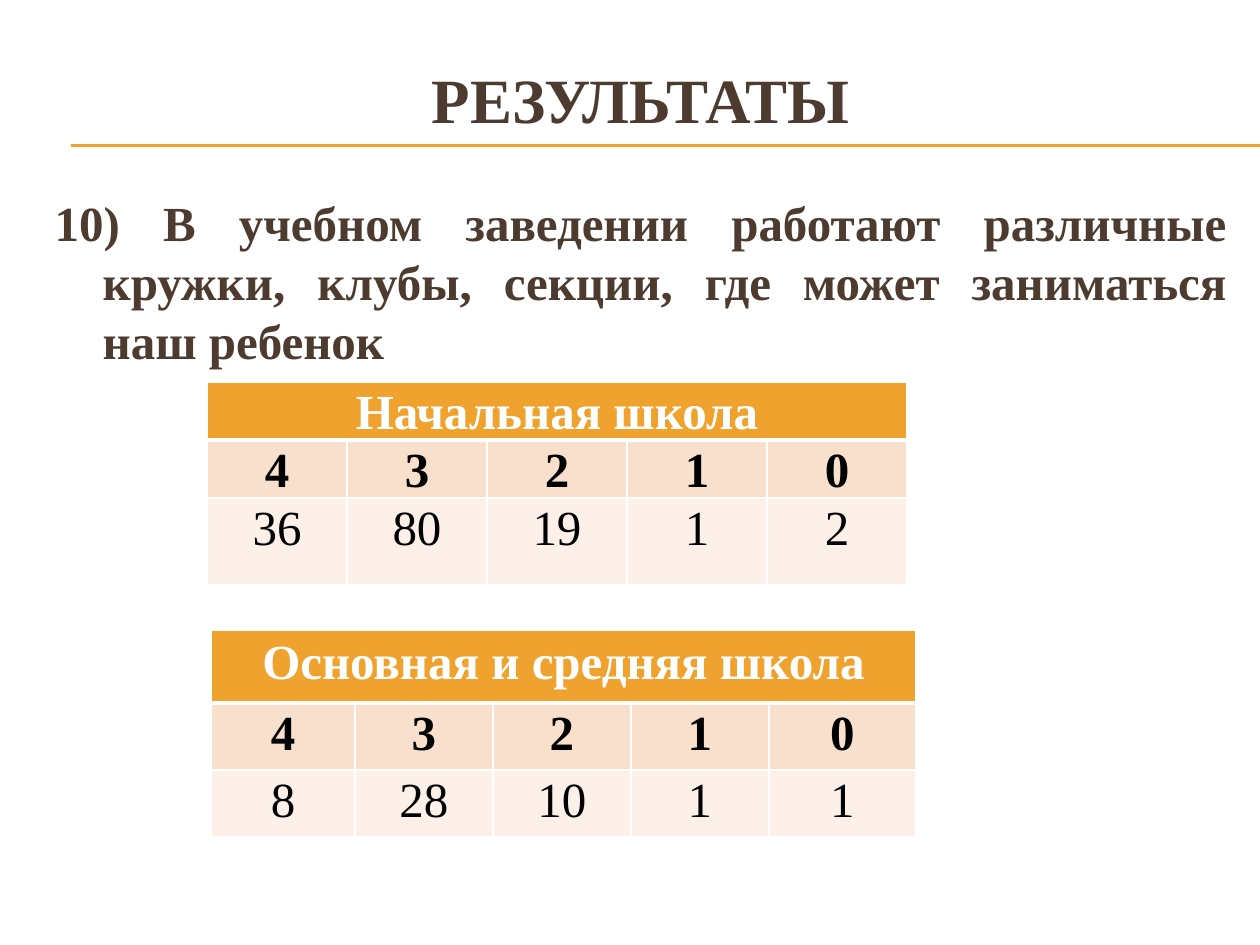
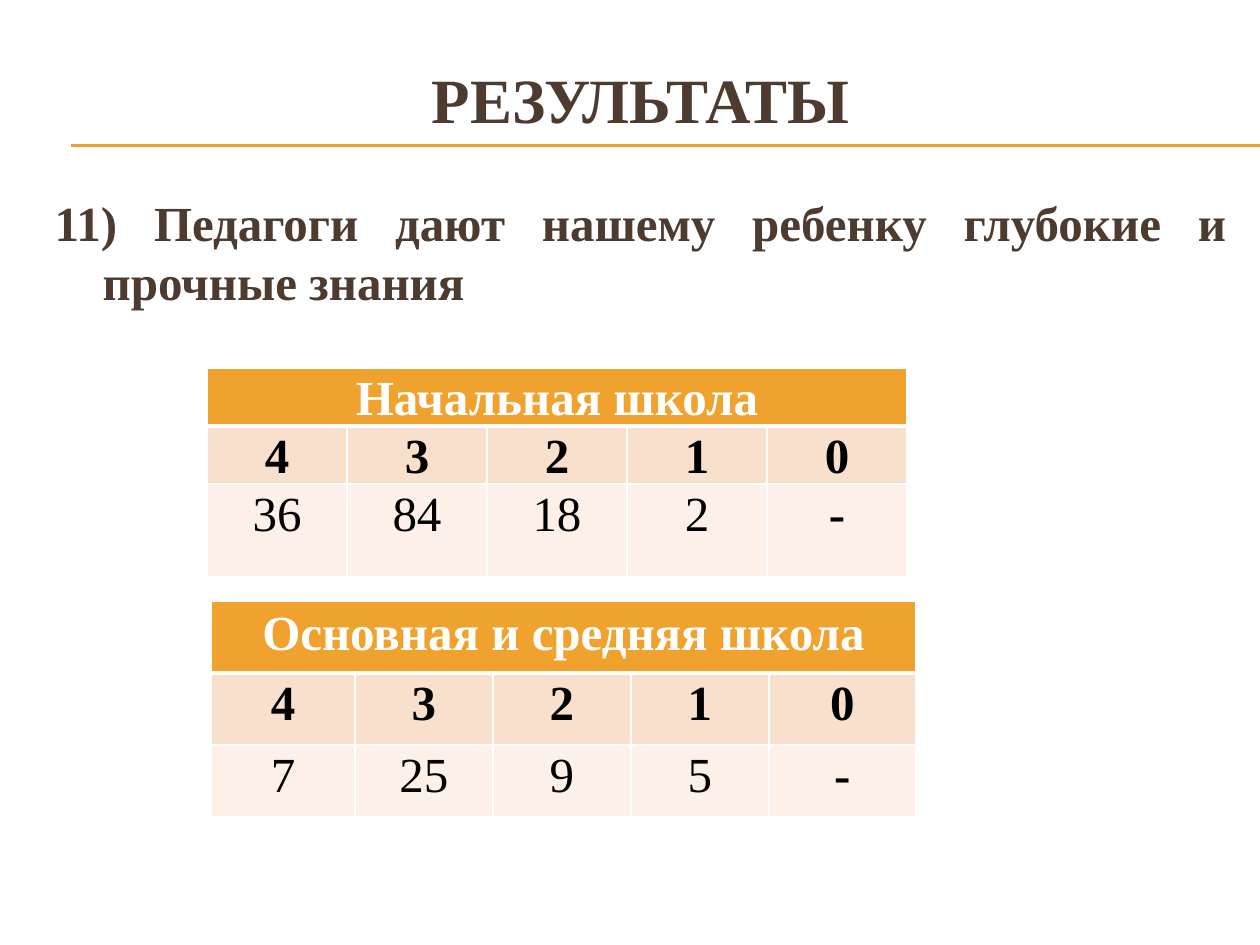
"""Build two survey result slides, each with a statement and two score tables."""

import dataclasses
import typing

import lxml.etree
import pptx
import pptx.dml.color
import pptx.enum.shapes
import pptx.enum.text
import pptx.oxml.ns
import pptx.util

EMU_PER_PX = 914400 / 126


@dataclasses.dataclass(frozen=True)
class Theme:
    font: str = "Times New Roman"
    brown: str = "4E3B30"
    orange: str = "F0A22E"
    peach: str = "F9E0CD"
    cream: str = "FCF0E8"
    white: str = "FFFFFF"
    black: str = "000000"
    title_size: int = 36
    text_size: int = 28
    rule_width: float = 0.75
    border_width: int = 1
    header_border_width: int = 3


class Box(typing.NamedTuple):
    left: int
    top: int
    width: int
    height: int


class TableStyle(typing.NamedTuple):
    heading: str
    left: int
    columns: tuple[int, ...]
    header_inset: int
    header_spacing: float


class ScoreTable(typing.NamedTuple):
    style: TableStyle
    top: int
    rows: tuple[int, ...]
    counts: tuple[str, ...]


class ResultSlide(typing.NamedTuple):
    statement: str
    tables: tuple[ScoreTable, ...]


THEME = Theme()
ALIGN = pptx.enum.text.PP_ALIGN
TITLE = "РЕЗУЛЬТАТЫ"
TITLE_BOX = Box(42, 39, 1197, 118)
BODY_BOX = Box(42, 186, 1197, 650)
HANGING_INDENT = 48
RULE_LEFT, RULE_RIGHT, RULE_TOPS = 71, 1260, (145, 146)
CELL_SIDE_INSET = 9
CELL_LINE_SPACING = 1.07
SCORES = ("4", "3", "2", "1", "0")

PRIMARY = TableStyle("Начальная школа", 207, (140,) * 5, 0, CELL_LINE_SPACING)
SECONDARY = TableStyle("Основная и средняя школа", 211, (144, 138, 138, 138, 147), 6, 1.0)

SLIDES = (
    ResultSlide(
        "10) В учебном заведении работают различные кружки, клубы, секции, "
        "где может заниматься наш ребенок",
        (
            ScoreTable(PRIMARY, 382, (58, 58, 87), ("36", "80", "19", "1", "2")),
            ScoreTable(SECONDARY, 630, (73, 67, 67), ("8", "28", "10", "1", "1")),
        ),
    ),
    ResultSlide(
        "11) Педагоги дают нашему ребенку глубокие и прочные знания",
        (
            ScoreTable(PRIMARY, 368, (58, 58, 93), ("36", "84", "18", "2", "-")),
            ScoreTable(SECONDARY, 601, (72, 72, 72), ("7", "25", "9", "5", "-")),
        ),
    ),
)


def px(length: int) -> pptx.util.Emu:
    return pptx.util.Emu(round(length * EMU_PER_PX))


def rgb(color: str) -> pptx.dml.color.RGBColor:
    return pptx.dml.color.RGBColor.from_string(color)


def apply_format(target: typing.Any, values: dict[str, typing.Any]) -> None:
    for name, value in values.items():
        setattr(target, name, value)


def add_element(parent: typing.Any, tag: str, **attributes: str) -> typing.Any:
    return lxml.etree.SubElement(parent, pptx.oxml.ns.qn(tag), attributes)


def write_text(frame: typing.Any, text: str, size: int, color: str, bold: bool,
               paragraph_format: dict[str, typing.Any]) -> typing.Any:
    paragraph = frame.paragraphs[0]
    apply_format(paragraph, paragraph_format)
    run = paragraph.add_run()
    run.text = text
    apply_format(run.font, {"name": THEME.font, "size": pptx.util.Pt(size), "bold": bold})
    run.font.color.rgb = rgb(color)
    return paragraph


def fill_placeholder(shape: typing.Any, box: Box, text: str, size: int, anchor: typing.Any,
                     paragraph_format: dict[str, typing.Any]) -> typing.Any:
    apply_format(shape, {name: px(value) for name, value in box._asdict().items()})
    apply_format(shape.text_frame, {
        "word_wrap": True,
        "auto_size": pptx.enum.text.MSO_AUTO_SIZE.NONE,
        "vertical_anchor": anchor,
    })
    return write_text(shape.text_frame, text, size, THEME.brown, True, paragraph_format)


def add_rules(slide: typing.Any) -> None:
    for top in RULE_TOPS:
        rule = slide.shapes.add_connector(
            pptx.enum.shapes.MSO_CONNECTOR.STRAIGHT,
            px(RULE_LEFT), px(top), px(RULE_RIGHT), px(top))
        rule.line.color.rgb = rgb(THEME.orange)
        rule.line.width = pptx.util.Pt(THEME.rule_width)
        add_element(rule._element.spPr, "a:effectLst")


def add_statement(slide: typing.Any, statement: str) -> None:
    anchors = pptx.enum.text.MSO_ANCHOR
    fill_placeholder(slide.shapes.title, TITLE_BOX, TITLE, THEME.title_size,
                     anchors.MIDDLE, {"alignment": ALIGN.CENTER})
    paragraph = fill_placeholder(
        slide.placeholders[1], BODY_BOX, statement, THEME.text_size, anchors.TOP,
        {"alignment": ALIGN.JUSTIFY, "space_before": pptx.util.Pt(3)})
    properties = paragraph._p.get_or_add_pPr()
    properties.set("marL", str(px(HANGING_INDENT)))
    properties.set("indent", str(px(-HANGING_INDENT)))
    add_element(properties, "a:buNone")


def style_cell(cell: typing.Any, row: int, inset: int) -> None:
    apply_format(cell, {
        "margin_left": px(CELL_SIDE_INSET), "margin_right": px(CELL_SIDE_INSET),
        "margin_top": px(inset), "margin_bottom": px(inset),
    })
    properties = cell._tc.get_or_add_tcPr()
    for side in "LRTB":
        under_header = (row, side) in ((0, "B"), (1, "T"))
        width = THEME.header_border_width if under_header else THEME.border_width
        border = add_element(properties, f"a:ln{side}", w=str(pptx.util.Pt(width)))
        add_element(add_element(border, "a:solidFill"), "a:srgbClr", val=THEME.white)
    cell.fill.solid()
    cell.fill.fore_color.rgb = rgb((THEME.orange, THEME.peach, THEME.cream)[row])


def add_score_table(slide: typing.Any, scores: ScoreTable) -> None:
    style = scores.style
    table = slide.shapes.add_table(
        len(scores.rows), len(style.columns), px(style.left), px(scores.top),
        px(sum(style.columns)), px(sum(scores.rows))).table
    for column, width in zip(table.columns, style.columns):
        column.width = px(width)
    for row, height in zip(table.rows, scores.rows):
        row.height = px(height)
    table.cell(0, 0).merge(table.cell(0, len(style.columns) - 1))
    for row_index, texts in enumerate(((style.heading,), SCORES, scores.counts)):
        header = row_index == 0
        for column_index in range(len(style.columns)):
            style_cell(table.cell(row_index, column_index), row_index,
                       style.header_inset if header else 0)
        for column_index, text in enumerate(texts):
            write_text(
                table.cell(row_index, column_index).text_frame, text, THEME.text_size,
                THEME.white if header else THEME.black, row_index < 2 or text == "-",
                {"alignment": ALIGN.CENTER,
                 "line_spacing": style.header_spacing if header else CELL_LINE_SPACING})


def main() -> None:
    presentation = pptx.Presentation()
    apply_format(presentation, {"slide_width": px(1260), "slide_height": px(945)})
    for result in SLIDES:
        slide = presentation.slides.add_slide(presentation.slide_layouts[1])
        add_rules(slide)
        add_statement(slide, result.statement)
        for scores in result.tables:
            add_score_table(slide, scores)
    presentation.save("out.pptx")


if __name__ == "__main__":
    main()
